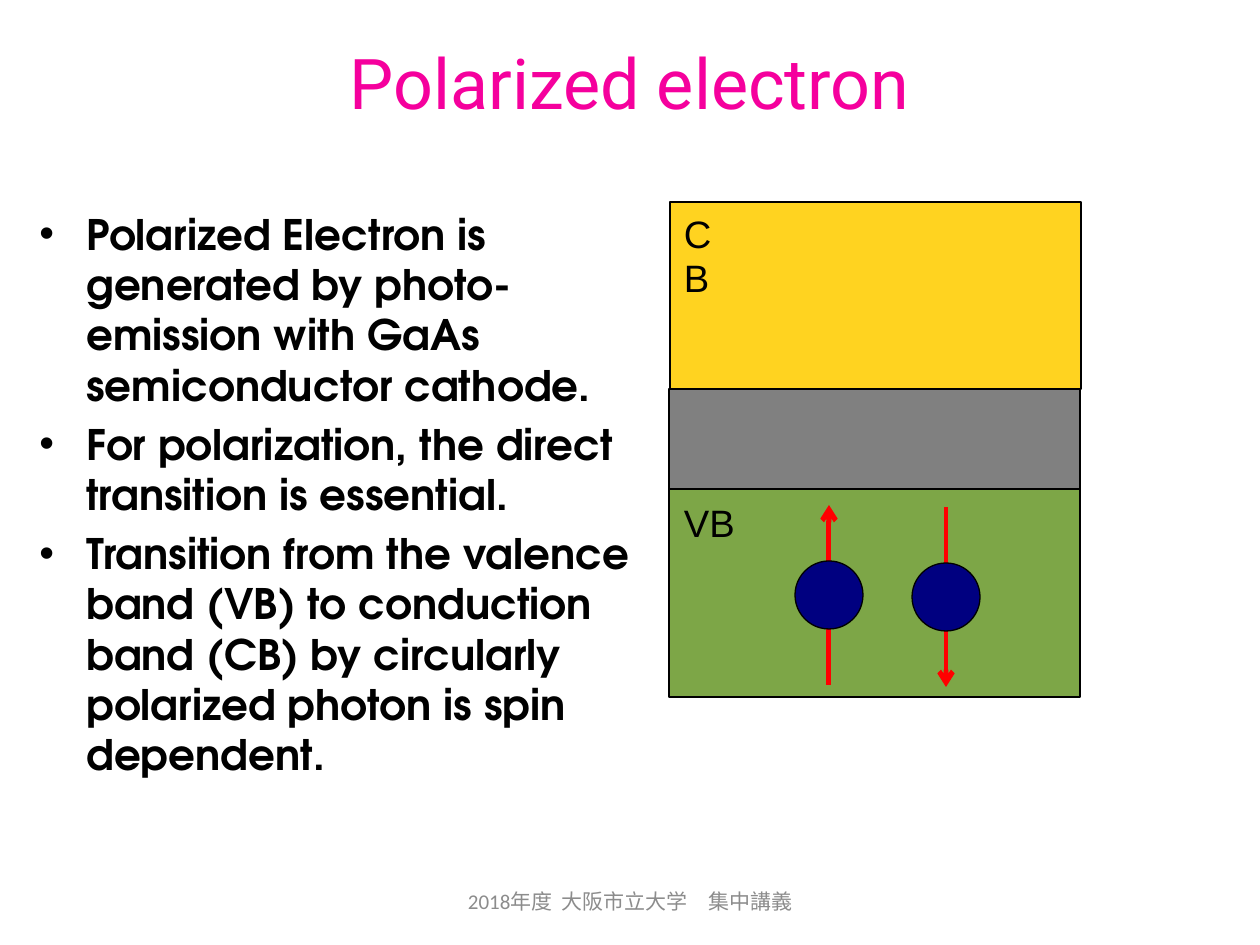
from pptx import Presentation
from pptx.dml.color import RGBColor
from pptx.enum.shapes import MSO_CONNECTOR, MSO_SHAPE
from pptx.enum.text import MSO_ANCHOR, MSO_AUTO_SIZE, PP_ALIGN
from pptx.oxml.ns import qn
from pptx.util import Emu, Pt
from lxml.etree import SubElement

PX_PER_INCH = 126
BLACK = RGBColor(0x00, 0x00, 0x00)
PINK = RGBColor(0xF5, 0x00, 0x9D)
YELLOW = RGBColor(0xFF, 0xD3, 0x20)
GRAY = RGBColor(0x80, 0x80, 0x80)
GREEN = RGBColor(0x7D, 0xA6, 0x47)
NAVY = RGBColor(0x00, 0x00, 0x80)
RED = RGBColor(0xFF, 0x00, 0x00)
FOOTER_GRAY = RGBColor(0x8C, 0x8C, 0x8C)


def px(*lengths):
    return [Emu(length * 914400 // PX_PER_INCH) for length in lengths]


def write(para, text, *, font, size, color, bold=False, align=PP_ALIGN.LEFT):
    para.alignment = align
    span = para.add_run()
    span.text = text
    span.font.name = font
    span.font.size = Pt(size)
    span.font.bold = bold
    span.font.color.rgb = color


def add_bullet(para, indent):
    """Give the paragraph a round bullet with a hanging indent in px."""
    properties = para._p.get_or_add_pPr()
    hang = px(indent)[0]
    properties.set("marL", str(hang))
    properties.set("indent", str(-hang))
    SubElement(properties, qn("a:buFont"), typeface="Arial")
    SubElement(properties, qn("a:buChar"), char="•")


class SlideBuilder:
    def __init__(self, deck):
        self.page = deck.slides.add_slide(deck.slide_layouts[5])

    def title(self, text, left, top, width, height):
        box = self.page.shapes.title
        box.left, box.top, box.width, box.height = px(left, top, width, height)
        frame = box.text_frame
        frame.auto_size = MSO_AUTO_SIZE.NONE
        frame.vertical_anchor = MSO_ANCHOR.MIDDLE
        write(frame.paragraphs[0], text, font="Roboto", size=40, color=PINK,
              align=PP_ALIGN.CENTER)

    def text_frame(self, left, top, width, height, *, wrap=True,
                   anchor=MSO_ANCHOR.TOP):
        box = self.page.shapes.add_textbox(*px(left, top, width, height))
        frame = box.text_frame
        frame.word_wrap = wrap
        frame.vertical_anchor = anchor
        return frame

    def bullets(self, items, *place):
        frame = self.text_frame(*place)
        for number, item in enumerate(items):
            para = frame.add_paragraph() if number else frame.paragraphs[0]
            para.space_before = Pt(4.8)
            write(para, item, font="TeX Gyre Adventor", size=24, color=BLACK,
                  bold=True)
            add_bullet(para, 47)

    def footer(self, text, *place):
        frame = self.text_frame(*place, anchor=MSO_ANCHOR.MIDDLE)
        write(frame.paragraphs[0], text, font="Calibri", size=12,
              color=FOOTER_GRAY, align=PP_ALIGN.CENTER)

    def label(self, text, *place):
        frame = self.text_frame(*place, wrap=False)
        frame.margin_left = frame.margin_right = 0
        frame.margin_top = frame.margin_bottom = 0
        para = frame.paragraphs[0]
        para.line_spacing = 0.96
        write(para, text, font="Arial", size=21.8, color=BLACK)

    def shape(self, kind, color, left, top, width, height, shapes=None):
        shapes = shapes or self.page.shapes
        shape = shapes.add_shape(kind, *px(left, top, width, height))
        shape.shadow.inherit = False
        shape.fill.solid()
        shape.fill.fore_color.rgb = color
        shape.line.color.rgb = BLACK
        shape.line.width = Pt(0)

    def arrow(self, x, start, end, shapes):
        arrow = shapes.add_connector(MSO_CONNECTOR.STRAIGHT,
                                     *px(x, start, x, end))
        arrow.line.color.rgb = RED
        arrow.line.width = Pt(2.83)
        SubElement(arrow.line._get_or_add_ln(), qn("a:tailEnd"), type="arrow")
        SubElement(arrow._element.spPr, qn("a:effectLst"))

    def electron(self, x, y, direction, radius=34, reach=90):
        """Draw a ball on its spin arrow; direction is -1 for up, 1 for down."""
        shapes = self.page.shapes.add_group_shape().shapes
        self.arrow(x, y - direction * reach, y + direction * reach, shapes)
        self.shape(MSO_SHAPE.OVAL, NAVY, x - radius, y - radius,
                   2 * radius, 2 * radius, shapes)


def main():
    deck = Presentation()
    deck.slide_width, deck.slide_height = px(1260, 945)
    slide = SlideBuilder(deck)

    top = 202
    for color, left, height in ((YELLOW, 670, 187), (GRAY, 669, 100),
                                (GREEN, 669, 208)):
        slide.shape(MSO_SHAPE.RECTANGLE, color, left, top, 411, height)
        top += height

    slide.title("Polarized electron", 101, 33, 1057, 97)
    slide.bullets((
        "Polarized Electron is generated by photo-emission with GaAs "
        "semiconductor cathode.",
        "For polarization, the direct transition is essential.",
        "Transition from the valence band (VB) to conduction band (CB) by "
        "circularly polarized photon is spin dependent.",
    ), 27, 202, 640, 653)

    slide.electron(946, 597, 1)
    slide.electron(829, 595, -1)
    slide.label("VB", 684, 502, 52, 43)
    slide.label("CB", 684, 213, 52, 43)
    slide.footer("2018年度  大阪市立大学　集中講義", 431, 876, 399, 50)

    deck.save("out.pptx")


if __name__ == "__main__":
    main()
